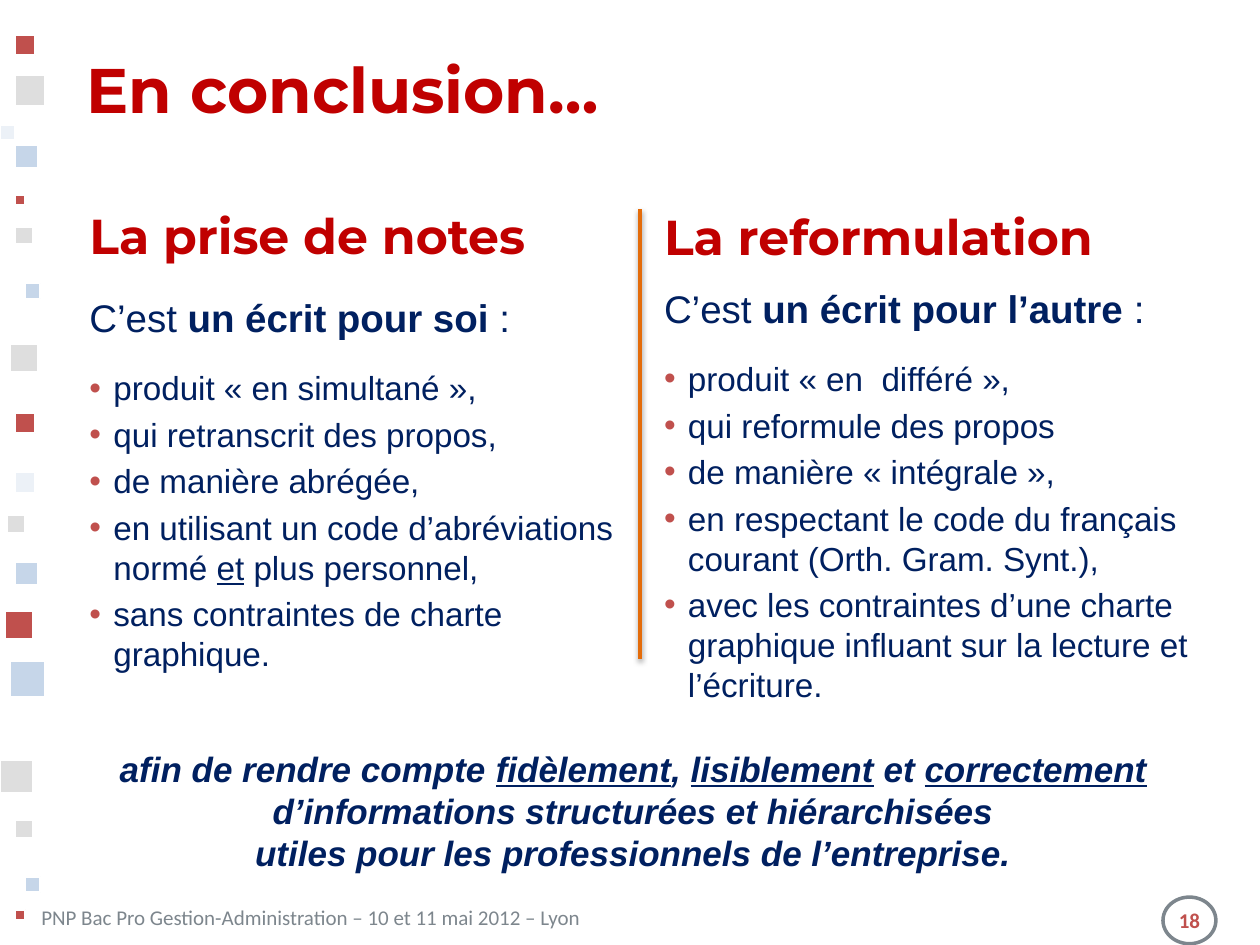
from dataclasses import dataclass
from lxml.etree import SubElement
from pptx import Presentation
from pptx.dml.color import RGBColor as RGB
from pptx.enum.shapes import MSO_CONNECTOR as LINK, MSO_SHAPE as FORM
from pptx.enum.text import MSO_ANCHOR as ANCHOR, PP_ALIGN as ALIGN
from pptx.oxml.ns import qn
from pptx.util import Emu, Pt

SCALE = 9144  # EMU per px, 100 px to the inch


@dataclass(frozen=True)
class Theme:
    red: str = "C00000"
    brick: str = "C0504D"
    navy: str = "002060"
    grey: str = "7D868D"
    rule: str = "E46C0A"
    white: str = "FFFFFF"
    silver: str = "BFBFBF"
    sky: str = "B8CCE4"
    mist: str = "DBE5F1"
    head: str = "Montserrat"
    body: str = "Arial"
    foot: str = "Calibri"
    title: int = 36
    topic: int = 28
    lead: int = 22
    item: int = 19
    close: int = 20
    small: int = 12


def px(n):
    return Emu(n * SCALE)


def node(parent, tag, **attrs):
    return SubElement(parent, qn(tag), {k: str(v) for k, v in attrs.items()})


class Deck:
    def __init__(self, theme):
        self.theme = theme
        self.file = Presentation()
        self.file.slide_width, self.file.slide_height = px(1000), px(750)
        self.slide = self.file.slides.add_slide(self.file.slide_layouts[6])
        self.shapes = self.slide.shapes

    def shape(self, form, box, fill=None, alpha=100, line=None, width=1):
        item = self.shapes.add_shape(form, *map(px, box))
        item.shadow.inherit = False
        if fill:
            item.fill.solid()
            item.fill.fore_color.rgb = RGB.from_string(fill)
            if alpha < 100:
                clr = item.fill._xPr.find(".//" + qn("a:srgbClr"))
                node(clr, "a:alpha", val=alpha * 1000)
        else:
            item.fill.background()
        item.line.color.rgb = RGB.from_string(line)
        item.line.width = Pt(width)
        return item

    def rule(self, x, top, end):
        """Draw the upright divider with its soft shadow."""
        bar = self.shapes.add_connector(LINK.STRAIGHT, *map(px, (x, top, x, end)))
        bar.line.color.rgb = RGB.from_string(self.theme.rule)
        bar.line.width = Pt(2)
        cast = node(node(bar._element.spPr, "a:effectLst"), "a:outerShdw",
                    blurRad=Pt(3.1), dist=Pt(1.6), dir=90 * 60000, rotWithShape=0)
        node(node(cast, "a:srgbClr", val="000000"), "a:alpha", val=38000)

    def frame(self, box, left=10, anchor=ANCHOR.TOP):
        text = self.shapes.add_textbox(*map(px, box)).text_frame
        look = {"word_wrap": True, "vertical_anchor": anchor,
                "margin_left": px(left), "margin_right": px(left),
                "margin_top": px(5), "margin_bottom": px(5)}
        for key, val in look.items():
            setattr(text, key, val)
        return text

    def para(self, text, runs, face, size, color, before=0, after=0,
             align=ALIGN.LEFT, bullet=False, **base):
        """Add a paragraph; runs are (words, format) pairs."""
        first = text.paragraphs[0]
        par = first if not first.runs else text.add_paragraph()
        look = {"space_before": Pt(before), "space_after": Pt(after),
                "alignment": align}
        for key, val in look.items():
            setattr(par, key, val)
        if bullet:
            props = par._p.get_or_add_pPr()
            props.set("marL", str(px(19)))
            props.set("indent", str(px(-19)))
            node(node(props, "a:buClr"), "a:srgbClr", val=self.theme.brick)
            node(props, "a:buFont", typeface=face)
            node(props, "a:buChar", char="•")
        for words, extra in runs:
            for n, part in enumerate(words.split("\n")):
                if n:
                    par.add_line_break()
                run = par.add_run()
                run.text = part
                look = {"name": face, "size": Pt(size), **base, **extra}
                for key, val in look.items():
                    setattr(run.font, key, val)
                run.font.color.rgb = RGB.from_string(color)

    def column(self, box, topic, gap, lead, items):
        t = self.theme
        text = self.frame(box, left=0)
        self.para(text, [(topic, {})], t.head, t.topic, t.red, 5.6, bold=True)
        self.para(text, [("C’est ", {}), (lead, BOLD), (" :", {})],
                  t.body, t.lead, t.navy, gap, 12)
        for runs in items:
            if isinstance(runs, str):
                runs = [(runs, {})]
            self.para(text, runs, t.body, t.item, t.navy, 3.8, bullet=True)


BOLD = {"bold": True}
UNDER = {"underline": True}


def main():
    t = Theme()
    deck = Deck(t)

    # fill, opacity, then (left, top, side) of each square in the margin
    tiles = [
        (t.sky, 80, [(8, 525, 28), (12, 115, 18), (20, 225, 12),
                     (12, 446, 18), (20, 696, 12)]),
        (t.mist, 50, [(0, 99, 12), (12, 375, 16)]),
        (t.silver, 50, [(0, 603, 26), (12, 180, 14), (8, 273, 22),
                        (12, 60, 24), (6, 409, 14), (12, 651, 14)]),
        (t.brick, 100, [(12, 328, 16), (4, 485, 22), (12, 28, 16),
                        (12, 722, 8), (12, 155, 8)]),
    ]
    for fill, alpha, spots in tiles:
        for x, y, side in spots:
            deck.shape(FORM.RECTANGLE, (x, y, side, side), fill, alpha, t.white)

    deck.column((71, 158, 429, 398), "La prise de notes", 17, "un écrit pour soi", [
        "produit « en simultané »,",
        "qui retranscrit des propos,",
        "de manière abrégée,",
        [("en utilisant un code d’abréviations normé ", {}), ("et", UNDER),
         (" plus personnel,", {})],
        "sans contraintes de charte graphique.",
    ])
    deck.column((527, 159, 455, 397), "La reformulation", 11, "un écrit pour l’autre", [
        "produit « en  différé »,",
        "qui reformule des propos",
        "de manière « intégrale »,",
        "en respectant le code du français courant (Orth. Gram. Synt.),",
        "avec les contraintes d’une charte graphique influant sur la lecture "
        "et l’écriture.",
    ])

    title = deck.frame((59, 40, 914, 60), anchor=ANCHOR.MIDDLE)
    deck.para(title, [("En conclusion…", {})], t.head, t.title, t.red, bold=True)

    close = deck.frame((38, 588, 929, 111))
    deck.para(close, [
        ("afin de rendre compte ", {}), ("fidèlement", UNDER), (", ", {}),
        ("lisiblement", UNDER), (" et ", {}), ("correctement", UNDER),
        ("\nd’informations structurées et hiérarchisées"
         "\nutiles pour les professionnels de l’entreprise.", {}),
    ], t.body, t.close, t.navy, align=ALIGN.CENTER, bold=True, italic=True)

    deck.rule(508, 166, 523)

    foot = deck.frame((23, 713, 880, 30))
    deck.para(foot, [("PNP Bac Pro Gestion-Administration – 10 et 11 mai 2012 – Lyon", {})],
              t.foot, t.small, t.grey)
    badge = deck.shape(FORM.OVAL, (923, 712, 42, 37), line=t.grey, width=2).text_frame
    for edge in ("left", "right", "top", "bottom"):
        setattr(badge, "margin_" + edge, 0)
    badge.vertical_anchor = ANCHOR.MIDDLE
    deck.para(badge, [("18", BOLD)], t.foot, t.small, t.brick, align=ALIGN.CENTER)

    deck.file.save("out.pptx")


if __name__ == "__main__":
    main()
